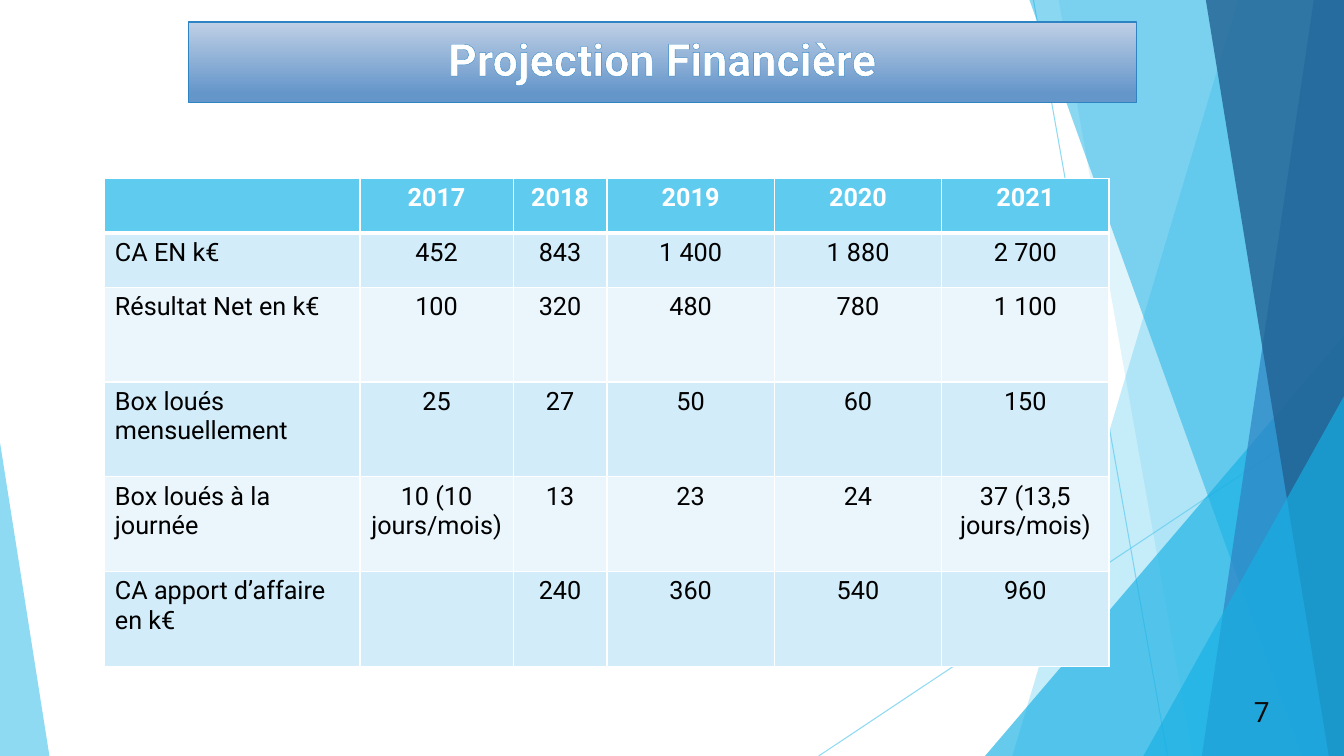
"""Build the five-year financial projection slide."""
from dataclasses import dataclass

from lxml.etree import SubElement
from pptx import Presentation
from pptx.dml.color import RGBColor as Rgb
from pptx.enum.shapes import MSO_CONNECTOR as Connector, MSO_SHAPE as Shape
from pptx.enum.text import MSO_ANCHOR as Anchor, MSO_AUTO_SIZE as AutoSize, PP_ALIGN as Align
from pptx.oxml import parse_xml
from pptx.oxml.ns import nsdecls, qn
from pptx.util import Inches, Pt


@dataclass(frozen=True)
class Theme:
    font: str = "Roboto"
    white: str = "FFFFFF"
    black: str = "000000"
    number: str = "0D0D0D"
    sky: str = "5FCBEF"
    azure: str = "17B0E4"
    blue: str = "2E83C3"
    navy: str = "226292"
    title_top: str = "BFCFE5"
    title_bottom: str = "6596CA"
    band_dark: str = "D2ECF9"
    band_light: str = "EAF6FC"
    title_size: int = 32
    number_size: int = 20
    table_size: int = 18


WIDTH, HEIGHT = 13.33, 7.5

COLUMN_WIDTHS = [2.53, 1.52, 0.93, 1.66, 1.66, 1.66]
ROW_HEIGHTS = [0.54] * 2 + [0.94] * 4
PROJECTION = [
    ["", "2017", "2018", "2019", "2020", "2021"],
    ["CA EN k€", "452", "843", "1 400", "1 880", "2 700"],
    ["Résultat Net en k€", "100", "320", "480", "780", "1 100"],
    ["Box loués mensuellement", "25", "27", "50", "60", "150"],
    ["Box loués à la journée", "10 (10 jours/mois)", "13", "23", "24", "37 (13,5 jours/mois)"],
    ["CA apport d’affaire en k€", "", "240", "360", "540", "960"],
]


class SlideBuilder:
    def __init__(self, deck, theme):
        self.theme = theme
        self.page = deck.slides.add_slide(deck.slide_layouts[5])
        self.shapes = self.page.shapes

    def set_opacity(self, fill, percent):
        color = fill._xPr.find(qn("a:solidFill"))[0]
        SubElement(color, qn("a:alpha"), val=str(percent * 1000))

    def paint(self, shape, color, opacity):
        shape.shadow.inherit = False
        shape.fill.solid()
        shape.fill.fore_color.rgb = Rgb.from_string(color)
        self.set_opacity(shape.fill, opacity)
        shape.line.fill.background()

    def add_span(self, para, text, size, color, align, bold=False):
        para.alignment = align
        span = para.add_run()
        span.text = text
        span.font.name = self.theme.font
        span.font.size = Pt(size)
        span.font.bold = bold
        span.font.color.rgb = Rgb.from_string(color)
        return span

    def line(self, start, end):
        ends = [Inches(value) for value in (*start, *end)]
        connector = self.shapes.add_connector(Connector.STRAIGHT, *ends)
        connector.line.width = Pt(0.75)
        connector.line.fill.solid()
        connector.line.color.rgb = Rgb.from_string(self.theme.sky)
        self.set_opacity(connector.line.fill, 70)
        SubElement(connector._element.spPr, qn("a:effectLst"))

    def right_panel(self, top_left, bottom_left, color, opacity):
        corners = [(WIDTH, 0), (WIDTH, HEIGHT), (bottom_left, HEIGHT)]
        outline = self.shapes.build_freeform(Inches(top_left), 0)
        outline.add_line_segments([(Inches(x), Inches(y)) for x, y in corners])
        self.paint(outline.convert_to_shape(), color, opacity)

    def corner_triangle(self, left, width, height, apex, color, opacity):
        triangle = self.shapes.add_shape(
            Shape.ISOSCELES_TRIANGLE,
            Inches(left), Inches(HEIGHT - height), Inches(width), Inches(height))
        triangle.adjustments[0] = apex
        self.paint(triangle, color, opacity)

    def title(self, text, left, top, width, height):
        theme, box = self.theme, self.shapes.title
        box.left, box.top = Inches(left), Inches(top)
        box.width, box.height = Inches(width), Inches(height)
        box.fill.gradient()
        box.fill.gradient_angle = 270
        stops = [(theme.title_top, 0), (theme.title_bottom, 0.88)]
        for stop, (color, position) in zip(box.fill.gradient_stops, stops):
            stop.color.rgb = Rgb.from_string(color)
            stop.position = position
        box.line.color.rgb = Rgb.from_string(theme.blue)
        box.line.width = Pt(1)
        frame = box.text_frame
        frame.auto_size = AutoSize.NONE
        frame.vertical_anchor = Anchor.TOP
        frame.margin_top = Inches(0.09)
        span = self.add_span(frame.paragraphs[0], text, theme.title_size, theme.white,
                             Align.CENTER, bold=True)
        span.font._element.insert(0, self.border("ln", theme.blue, 0.52))
        self.shapes._spTree.append(box._element)

    def page_number(self, text, left, top, width, height):
        box = self.shapes.add_textbox(Inches(left), Inches(top), Inches(width), Inches(height))
        frame = box.text_frame
        frame.word_wrap = True
        frame.vertical_anchor = Anchor.MIDDLE
        self.add_span(frame.paragraphs[0], text, self.theme.number_size, self.theme.number,
                      Align.RIGHT)

    def border(self, tag, color, points):
        return parse_xml(
            f'<a:{tag} {nsdecls("a")} w="{Pt(points)}"><a:solidFill>'
            f'<a:srgbClr val="{color}"/></a:solidFill></a:{tag}>')

    def table(self, rows, left, top, widths, heights):
        frame = self.shapes.add_table(
            len(rows), len(widths), Inches(left), Inches(top),
            Inches(sum(widths)), Inches(sum(heights)))
        grid = frame.table
        grid.horz_banding = False
        for column, width in zip(grid.columns, widths):
            column.width = Inches(width)
        for row, height in zip(grid.rows, heights):
            row.height = Inches(height)
        for row_index, values in enumerate(rows):
            for column_index, text in enumerate(values):
                self.cell(grid.cell(row_index, column_index), text, row_index, column_index)

    def cell(self, cell, text, row, column):
        theme, header = self.theme, row == 0
        band = theme.band_dark if row % 2 else theme.band_light
        cell.fill.solid()
        cell.fill.fore_color.rgb = Rgb.from_string(theme.sky if header else band)
        borders = {"lnL": 1, "lnR": 1, "lnT": 3 if row == 1 else 1, "lnB": 3 if header else 1}
        properties = cell._tc.get_or_add_tcPr()
        for index, (tag, points) in enumerate(borders.items()):
            properties.insert(index, self.border(tag, theme.white, points))
        if text:
            self.add_span(cell.text_frame.paragraphs[0], text, theme.table_size,
                          theme.white if header else theme.black,
                          Align.CENTER if column else Align.LEFT, bold=header)


def main():
    deck = Presentation()
    deck.slide_width, deck.slide_height = Inches(WIDTH), Inches(HEIGHT)
    theme = Theme()
    slide = SlideBuilder(deck, theme)

    slide.line((10.25, 0), (11.58, HEIGHT))
    slide.line((WIDTH, 4.03), (8.12, HEIGHT))
    slide.right_panel(12.28, 10.04, theme.sky, 36)
    slide.right_panel(10.5, 11.83, theme.sky, 20)
    slide.corner_triangle(9.77, 3.56, 4.17, 1, theme.azure, 66)
    slide.right_panel(10.21, 12.91, theme.azure, 50)
    slide.right_panel(13.03, 11.92, theme.blue, 70)
    slide.right_panel(11.96, 13.18, theme.navy, 80)
    slide.corner_triangle(11.34, 1.99, 3.57, 1, theme.azure, 66)
    slide.corner_triangle(0, 0.49, 3.11, 0, theme.sky, 70)

    slide.title("Projection Financière", 1.87, 0.22, 9.4, 0.8)
    slide.page_number("7", 11.52, 6.61, 1.17, 0.89)
    slide.table(PROJECTION, 1.04, 1.77, COLUMN_WIDTHS, ROW_HEIGHTS)
    deck.save("out.pptx")


if __name__ == "__main__":
    main()
